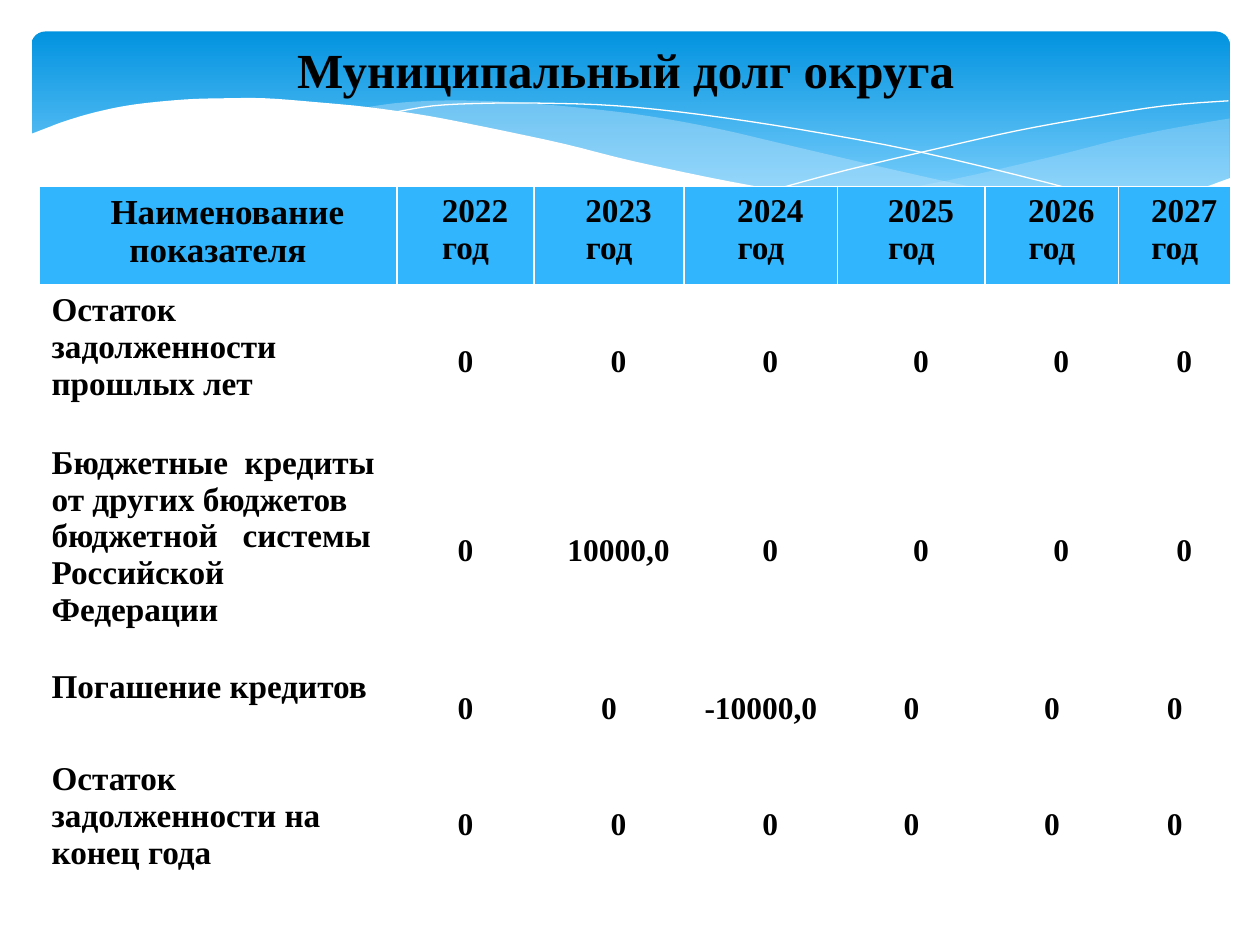
from lxml import etree
from pptx import Presentation
from pptx import util as u
from pptx.dml.color import RGBColor
from pptx.enum import shapes, text
from pptx.oxml import ns

WHITE = RGBColor(0xFF, 0xFF, 0xFF)
BLACK = RGBColor(0x00, 0x00, 0x00)
DEEP_BLUE = RGBColor(0x02, 0x93, 0xE0)
SKY_BLUE = RGBColor(0x83, 0xD3, 0xFE)
HEADER_BLUE = RGBColor(0x31, 0xB6, 0xFD)
PALE_BLUE = RGBColor(0xC6, 0xE7, 0xFC)

RIGHT_VEIL = [
    [(9.76, 0.94), (9.35, 1.01), (8.91, 1.1), (8.32, 1.25), (7.53, 1.43), (6.61, 1.6)],
    [(6.61, 1.6), (7.05, 1.65), (7.57, 1.7), (8.03, 1.72), (8.54, 1.7), (9.05, 1.63),
     (9.42, 1.54), (9.76, 1.41)],
]
LEFT_VEIL = [
    [(8.93, 1.67), (8.37, 1.59), (7.75, 1.49), (7.06, 1.34), (6.29, 1.16), (5.69, 1.02),
     (5.14, 0.92), (4.65, 0.86), (4.2, 0.82), (3.8, 0.8), (3.44, 0.8), (3.13, 0.82),
     (2.86, 0.86)],
    [(2.86, 0.86), (3.42, 0.94), (4.04, 1.06), (4.91, 1.26), (5.66, 1.43), (6.34, 1.56),
     (6.95, 1.65), (7.48, 1.7), (7.96, 1.73), (8.38, 1.72), (8.93, 1.67)],
]
FALLING_LINE = [[(3.09, 0.9), (3.44, 0.84), (3.87, 0.82), (4.33, 0.82), (4.89, 0.84),
                 (5.56, 0.91), (6.36, 1.03), (7.27, 1.2), (8.31, 1.45), (9.07, 1.66)]]
RISING_LINE = [[(6.13, 1.51), (6.72, 1.35), (7.48, 1.17), (8.06, 1.04), (8.66, 0.93),
                (9.24, 0.84), (9.75, 0.8)]]
WHITE_WAVE = [
    [(9.77, 1.41), (9.4, 1.54), (8.99, 1.64), (8.5, 1.7), (8.09, 1.71), (7.61, 1.7),
     (7.08, 1.65), (6.48, 1.56), (5.79, 1.44), (5.03, 1.28), (4.47, 1.14), (3.91, 1.02),
     (3.4, 0.92), (2.92, 0.85), (2.5, 0.81), (2.11, 0.78), (1.77, 0.78), (1.46, 0.79),
     (1.06, 0.83), (0.76, 0.89), (0.52, 0.96), (0.36, 1.02), (0.23, 1.07)],
    [(0.23, 2.24), (9.77, 2.24)],
]

COLUMN_WIDTHS = [2.84, 1.09, 1.19, 1.22, 1.17, 1.06, 0.89]
ROW_HEIGHTS = [0.79, 1.21, 1.78, 0.73, 1.11]
DEBT_ROWS = [
    ["Наименование показателя"] + [f"{year} год" for year in range(2022, 2028)],
    ["Остаток задолженности прошлых лет"] + ["0"] * 6,
    ["Бюджетные  кредиты от других бюджетов бюджетной   системы Российской Федерации",
     "0", "10000,0"] + ["0"] * 4,
    ["Погашение кредитов", "0", "0", "-10000,0"] + ["0"] * 3,
    ["Остаток задолженности на конец года"] + ["0"] * 6,
]
INDENTED_COLUMNS = [range(7), range(2, 7), range(2, 7), (), (2, 3)]


def smooth_points(knots, steps=4):
    """Points on a Catmull-Rom curve that passes through the knots."""
    padded = [knots[0], *knots, knots[-1]]
    points = [knots[0]]
    for a, b, c, d in zip(padded, padded[1:], padded[2:], padded[3:]):
        for step in range(1, steps + 1):
            t = step / steps
            points.append(tuple(
                (2 * q + (r - p) * t + (2 * p - 5 * q + 4 * r - s) * t ** 2
                 + (3 * q - p - 3 * r + s) * t ** 3) / 2
                for p, q, r, s in zip(a, b, c, d)))
    return points


class SlideBuilder:
    font_format = {"name": "Times New Roman", "bold": True}

    def __init__(self, slide):
        self.slide = slide

    def add_words(self, frame, words, size, align, indent=0):
        para = frame.paragraphs[0]
        para.alignment = align
        if indent:
            para._p.get_or_add_pPr().set("indent", str(u.Inches(indent)))
        span = para.add_run()
        span.text = words
        for name, value in {**self.font_format, "size": u.Pt(size)}.items():
            setattr(span.font, name, value)
        span.font.color.rgb = BLACK

    def banner(self, left, top, width, height):
        box = self.slide.shapes.add_shape(
            shapes.MSO_SHAPE.ROUNDED_RECTANGLE, *map(u.Inches, (left, top, width, height)))
        box.adjustments[0] = 0.07
        box.shadow.inherit = False
        box.line.fill.background()
        box.fill.gradient()
        box.fill.gradient_angle = 270
        stops = zip(box.fill.gradient_stops, (0, 0.9), (DEEP_BLUE, SKY_BLUE))
        for stop, position, color in stops:
            stop.position = position
            stop.color.rgb = color

    def wave(self, curves, fill=None, opacity=100):
        """A filled wave, or a white hairline when no fill is given."""
        points = [(u.Inches(x), u.Inches(y)) for curve in curves
                  for x, y in smooth_points(curve)]
        builder = self.slide.shapes.build_freeform(*points[0])
        builder.add_line_segments(points[1:], close=fill is not None)
        shape = builder.convert_to_shape()
        shape.shadow.inherit = False
        if fill is None:
            shape.fill.background()
            shape.line.color.rgb = WHITE
            shape.line.width = u.Pt(0)
            return
        shape.line.fill.background()
        shape.fill.solid()
        shape.fill.fore_color.rgb = fill
        if opacity < 100:
            color = shape.element.spPr.find(ns.qn("a:solidFill"))[0]
            etree.SubElement(color, ns.qn("a:alpha"), val=str(opacity * 1000))

    def title(self, words, left, top, width, height):
        box = self.slide.shapes.title
        place = {"left": left, "top": top, "width": width, "height": height}
        for name, value in place.items():
            setattr(box, name, u.Inches(value))
        box.text_frame.vertical_anchor = text.MSO_ANCHOR.MIDDLE
        self.add_words(box.text_frame, words, 28, text.PP_ALIGN.CENTER)
        box.element.getparent().append(box.element)  # in front of the banner

    def border(self, cell, side, points):
        line = etree.SubElement(cell._tc.get_or_add_tcPr(), ns.qn(f"a:ln{side}"),
                                w=str(u.Pt(points)))
        fill = etree.SubElement(line, ns.qn("a:solidFill"))
        etree.SubElement(fill, ns.qn("a:srgbClr"), val=str(WHITE))

    def cell(self, cell, words, row, column):
        header, label = row == 0, column == 0
        widths = {"L": 1, "R": 1, "T": 3 if row == 1 else 1, "B": 3 if header else 1}
        for side, points in widths.items():
            self.border(cell, side, points)
        if header:
            cell.fill.solid()
            cell.fill.fore_color.rgb = HEADER_BLUE
        else:
            cell.fill.background()
        plain = header or label
        cell.vertical_anchor = text.MSO_ANCHOR.TOP if plain else text.MSO_ANCHOR.MIDDLE
        size = 20 if header and label else 19 if plain else 18
        align = text.PP_ALIGN.LEFT if label and not header else text.PP_ALIGN.CENTER
        indent = 0.15 if column in INDENTED_COLUMNS[row] else 0
        self.add_words(cell.text_frame, words, size, align, indent)

    def table(self, rows, left, top):
        table = self.slide.shapes.add_table(
            len(rows), len(rows[0]), u.Inches(left), u.Inches(top),
            u.Inches(sum(COLUMN_WIDTHS)), u.Inches(sum(ROW_HEIGHTS))).table
        table.first_row = table.horz_banding = False
        for column, width in zip(table.columns, COLUMN_WIDTHS):
            column.width = u.Inches(width)
        for line, height in zip(table.rows, ROW_HEIGHTS):
            line.height = u.Inches(height)
        for row, entries in enumerate(rows):
            for column, words in enumerate(entries):
                self.cell(table.cell(row, column), words, row, column)


def main():
    deck = Presentation()
    deck.slide_width, deck.slide_height = u.Inches(10), u.Inches(7.5)
    page = SlideBuilder(deck.slides.add_slide(deck.slide_layouts[5]))
    page.banner(0.25, 0.25, 9.51, 1.56)
    page.wave(RIGHT_VEIL, PALE_BLUE, 29)
    page.wave(LEFT_VEIL, PALE_BLUE, 40)
    page.wave(FALLING_LINE)
    page.wave(RISING_LINE)
    page.wave(WHITE_WAVE, WHITE)
    page.title("Муниципальный долг округа", 0.23, 0.16, 9.47, 0.78)
    page.table(DEBT_ROWS, 0.31, 1.48)
    deck.save("out.pptx")


if __name__ == "__main__":
    main()
